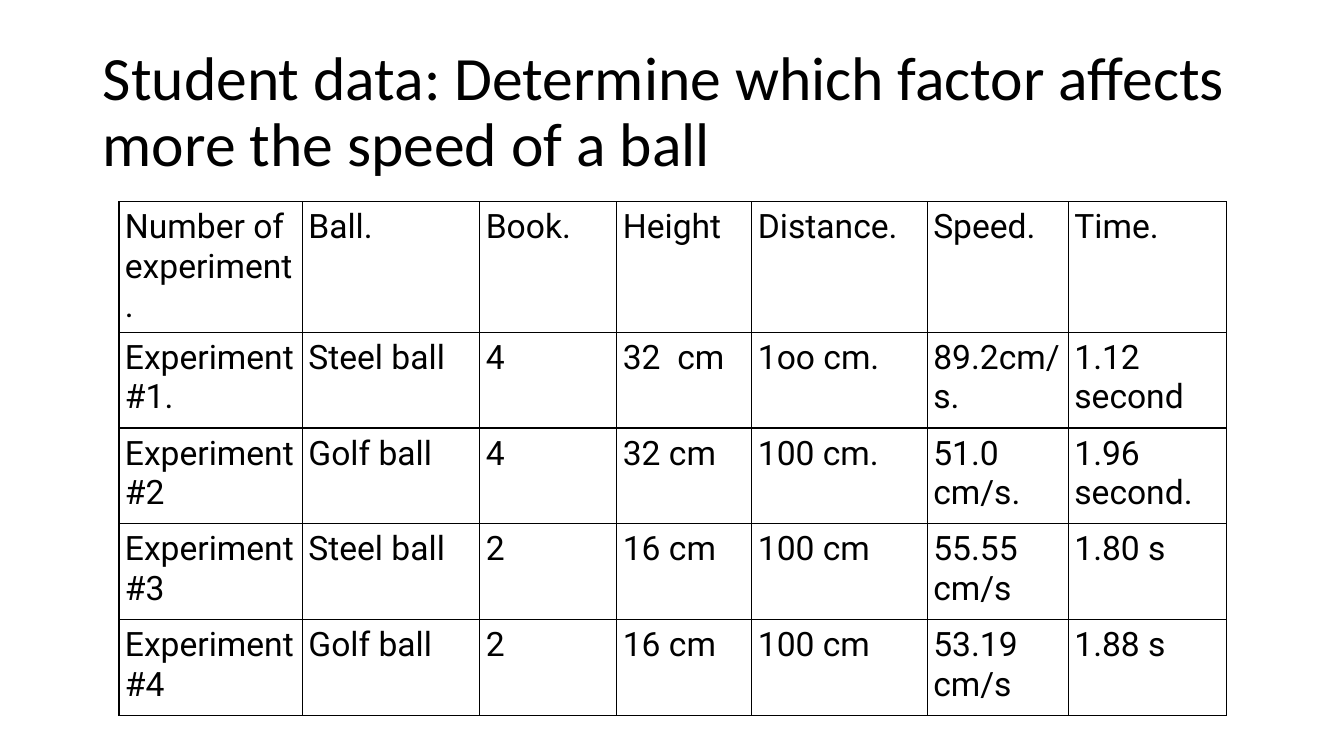
from dataclasses import dataclass

import pptx
import pptx.dml.color
import pptx.enum.text
import pptx.oxml.ns
import pptx.util
from lxml import etree

BLACK = pptx.dml.color.RGBColor(0x00, 0x00, 0x00)
WHITE = pptx.dml.color.RGBColor(0xFF, 0xFF, 0xFF)
SLIDE_WIDTH = pptx.util.Inches(13.33)
SLIDE_HEIGHT = pptx.util.Inches(7.5)
ROW_SHARE = 12.67
CELL_INSET = pptx.util.Inches(0.06)
BORDER_WIDTH = pptx.util.Pt(1)


@dataclass(frozen=True)
class Measurement:
    heading: str
    width_share: float
    readings: tuple[str, ...]


MEASUREMENTS = (
    Measurement("Number of experiment.", 13.65,
                ("Experiment #1.", "Experiment #2", "Experiment #3", "Experiment #4")),
    Measurement("Ball.", 13.2, ("Steel ball", "Golf ball", "Steel ball", "Golf ball")),
    Measurement("Book.", 10.2, ("4", "4", "2", "2")),
    Measurement("Height", 10.05, ("32  cm", "32 cm", "16 cm", "16 cm")),
    Measurement("Distance.", 13.05, ("1oo cm.", "100 cm.", "100 cm", "100 cm")),
    Measurement("Speed.", 10.5, ("89.2cm/s.", "51.0 cm/s.", "55.55 cm/s", "53.19 cm/s")),
    Measurement("Time.", 11.78, ("1.12 second", "1.96 second.", "1.80 s", "1.88 s")),
)


def across(share: float) -> int:
    return round(SLIDE_WIDTH * share / 100)


def down(share: float) -> int:
    return round(SLIDE_HEIGHT * share / 100)


def format_text(frame, font_name: str, size: int) -> None:
    for paragraph in frame.paragraphs:
        paragraph.alignment = pptx.enum.text.PP_ALIGN.LEFT
        for run in paragraph.runs:
            run.font.name = font_name
            run.font.size = pptx.util.Pt(size)
            run.font.color.rgb = BLACK


def add_borders(cell) -> None:
    qn = pptx.oxml.ns.qn
    properties = cell._tc.get_or_add_tcPr()
    for side in ("a:lnL", "a:lnR", "a:lnT", "a:lnB"):
        border = etree.SubElement(properties, qn(side), w=str(int(BORDER_WIDTH)))
        fill = etree.SubElement(border, qn("a:solidFill"))
        etree.SubElement(fill, qn("a:srgbClr"), val=str(BLACK))


def write_cell(cell, wording: str) -> None:
    cell.text_frame.text = wording
    format_text(cell.text_frame, "Roboto", 24)
    cell.margin_left = cell.margin_right = CELL_INSET
    cell.margin_top = cell.margin_bottom = CELL_INSET
    add_borders(cell)
    cell.fill.background()


def write_title(title) -> None:
    title.left, title.top = across(6.9), down(5.33)
    title.width, title.height = across(86.25), down(19.33)
    frame = title.text_frame
    frame.text = "Student data: Determine which factor affects more the speed of a ball"
    frame.word_wrap = True
    frame.auto_size = pptx.enum.text.MSO_AUTO_SIZE.NONE
    frame.vertical_anchor = pptx.enum.text.MSO_ANCHOR.MIDDLE
    frame.paragraphs[0].line_spacing = 0.9
    format_text(frame, "Calibri", 44)


def add_experiments(slide) -> None:
    row_count = 1 + len(MEASUREMENTS[0].readings)
    total_share = sum(measurement.width_share for measurement in MEASUREMENTS)
    experiments = slide.shapes.add_table(
        row_count, len(MEASUREMENTS), across(8.85), down(26.67),
        across(total_share), down(ROW_SHARE * row_count)).table
    experiments.first_row = False
    experiments.horz_banding = False
    for row in experiments.rows:
        row.height = down(ROW_SHARE)
    for column, measurement in enumerate(MEASUREMENTS):
        experiments.columns[column].width = across(measurement.width_share)
        for row, wording in enumerate((measurement.heading, *measurement.readings)):
            write_cell(experiments.cell(row, column), wording)


def main() -> None:
    presentation = pptx.Presentation()
    presentation.slide_width = SLIDE_WIDTH
    presentation.slide_height = SLIDE_HEIGHT
    slide = presentation.slides.add_slide(presentation.slide_layouts[5])
    slide.background.fill.solid()
    slide.background.fill.fore_color.rgb = WHITE
    write_title(slide.shapes.title)
    add_experiments(slide)
    presentation.save("out.pptx")


if __name__ == "__main__":
    main()
